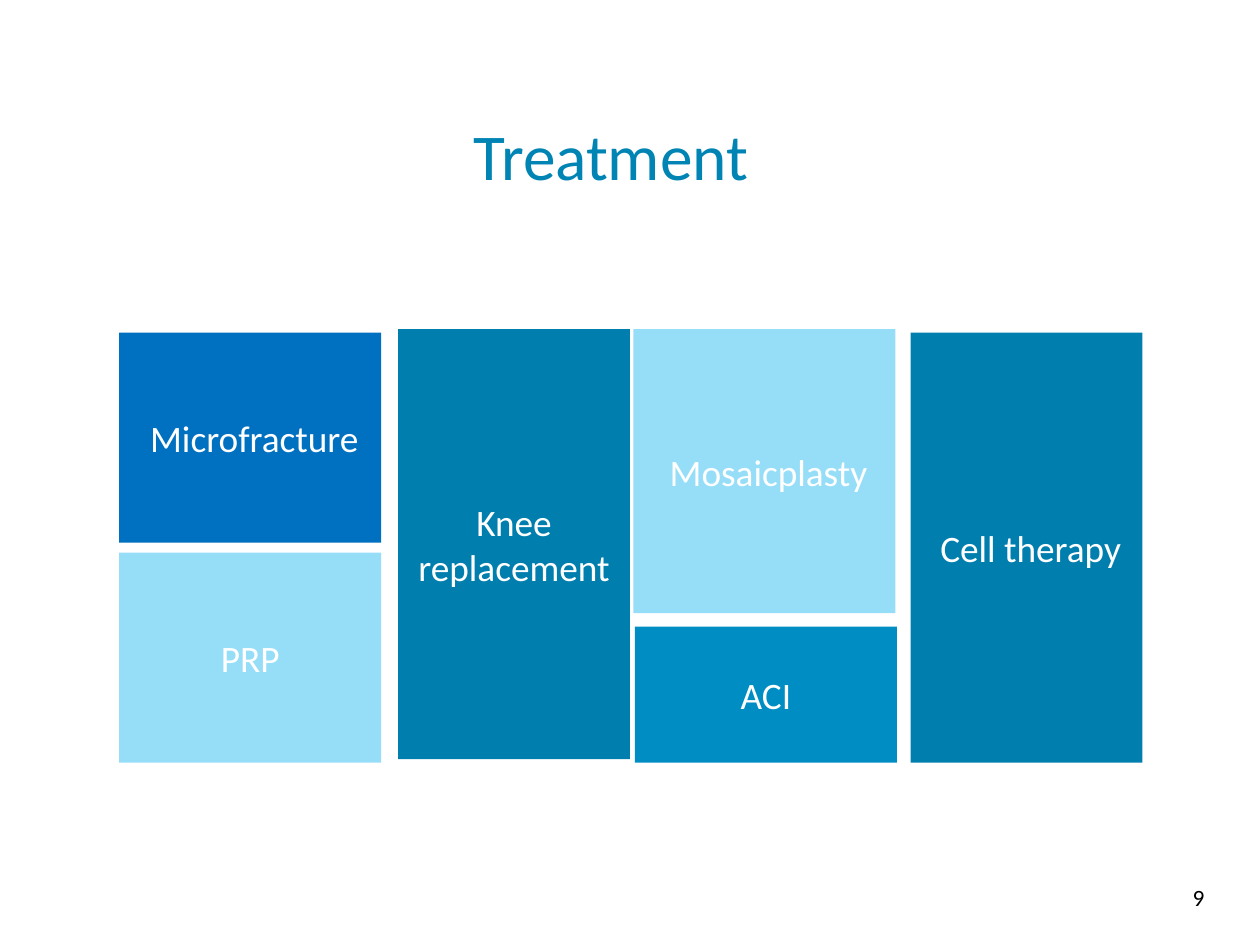
from pptx import Presentation
from pptx.dml.color import RGBColor
from pptx.enum.shapes import MSO_SHAPE
from pptx.enum.text import MSO_ANCHOR, PP_ALIGN
from pptx.oxml.ns import qn
from pptx.util import Inches, Pt
from lxml.etree import SubElement

BLUE = RGBColor(0x00, 0x70, 0xC0)
SKY = RGBColor(0x00, 0xB0, 0xF0)
AZURE = RGBColor(0x00, 0x8D, 0xC3)
TEAL = RGBColor(0x00, 0x7E, 0xAE)
HEAD = RGBColor(0x00, 0x84, 0xB4)
WHITE = RGBColor(0xFF, 0xFF, 0xFF)
BLACK = RGBColor(0x00, 0x00, 0x00)

WIDE, SLIM, TALL = 1.56, 1.38, 2.56


def write(shape, text, size=16, color=WHITE, align=PP_ALIGN.CENTER,
          anchor=MSO_ANCHOR.MIDDLE, inset=None):
    frame = shape.text_frame
    frame.word_wrap = True
    frame.vertical_anchor = anchor
    if inset is not None:
        frame.margin_left = frame.margin_right = Inches(inset)
        frame.margin_top = frame.margin_bottom = Inches(inset)
    para = frame.paragraphs[0]
    para.alignment = align
    run = para.add_run()
    run.text = text
    run.font.name = "Calibri"
    run.font.size = Pt(size)
    run.font.color.rgb = color


def add_tile(slide, box, text, color, alpha=None):
    tile = slide.shapes.add_shape(MSO_SHAPE.RECTANGLE, *map(Inches, box))
    tile.shadow.inherit = False
    tile.fill.solid()
    tile.fill.fore_color.rgb = color
    tile.line.fill.background()
    if alpha is not None:
        tint = tile.fill._xPr.find(qn("a:solidFill"))[0]
        SubElement(tint, qn("a:alpha")).set("val", str(alpha * 1000))
    write(tile, text)


def add_tiles(slide, left, top):
    tiles = [
        (3.06, 0, WIDE, 1.69, " Mosaicplasty", SKY, 41),
        (0, 0.02, WIDE, 1.25, " Microfracture", BLUE, None),
        (3.07, 1.77, WIDE, 0.81, "ACI", AZURE, None),
        (4.71, 0.02, SLIM, TALL, " Cell therapy", TEAL, None),
        (0, 1.33, WIDE, 1.25, "PRP", SKY, 41),
        (1.66, 0, SLIM, TALL, "Knee replacement", TEAL, None),
    ]
    for x, y, width, height, text, color, alpha in tiles:
        add_tile(slide, (left + x, top + y, width, height), text, color, alpha)


def add_title(slide, box):
    title = slide.shapes.add_textbox(*map(Inches, box))
    write(title, "Treatment ", size=28, color=HEAD, inset=0)


def add_number(slide, box):
    number = slide.shapes.add_textbox(*map(Inches, box))
    write(number, "9", size=10, color=BLACK, align=PP_ALIGN.LEFT,
          anchor=MSO_ANCHOR.TOP)


def main():
    deck = Presentation()
    deck.slide_width = Inches(7.5)
    deck.slide_height = Inches(7.5 * 3 / 4)
    slide = deck.slides.add_slide(deck.slide_layouts[6])
    add_title(slide, (0.25, 0.65, 6.86, 0.54))
    add_tiles(slide, 0.71, 1.96)
    add_number(slide, (7, 5.21, 0.42, 0.27))
    deck.save("out.pptx")


if __name__ == "__main__":
    main()
